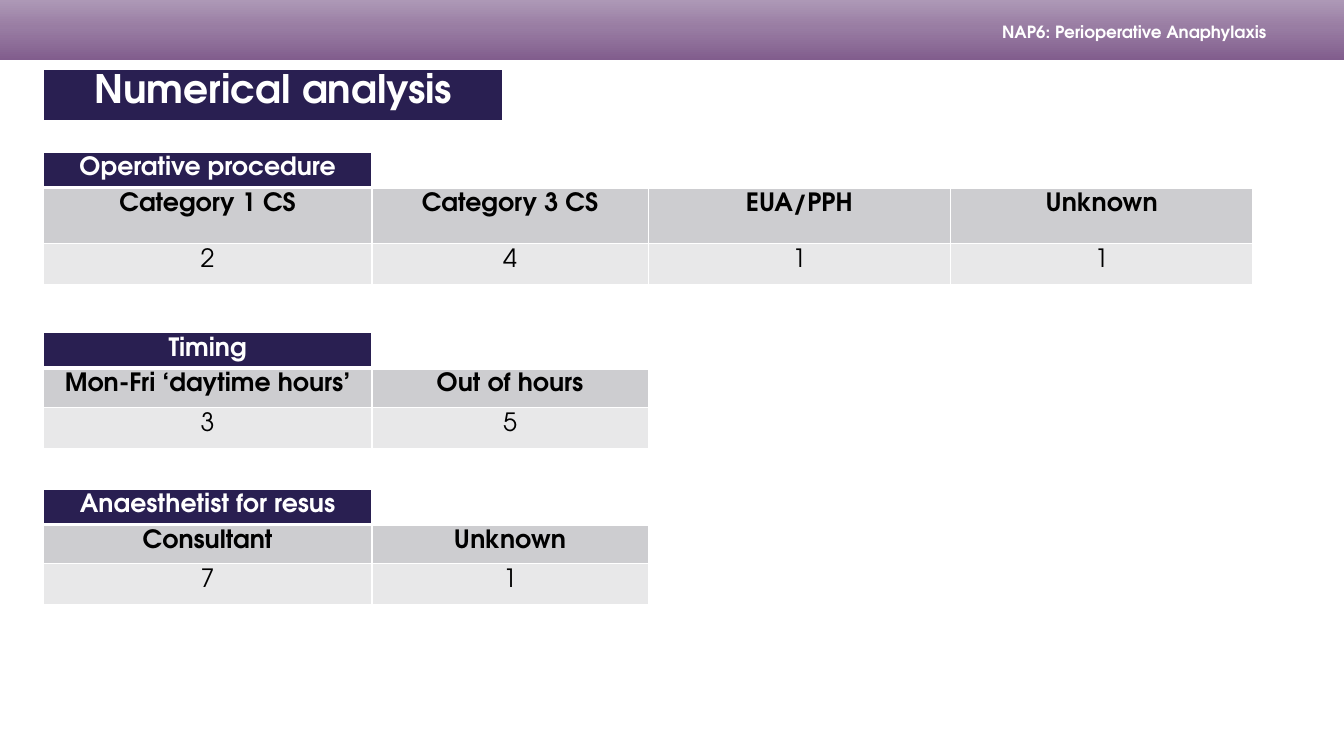
from copy import deepcopy

from lxml.etree import SubElement
from pptx import Presentation
from pptx.dml.color import RGBColor
from pptx.enum.shapes import MSO_SHAPE
from pptx.enum.text import MSO_ANCHOR, PP_ALIGN
from pptx.oxml.ns import qn
from pptx.util import Inches, Pt

NAVY, GREY, PALE, WHITE, BLACK = "291F51", "CDCDD0", "E8E8E9", "FFFFFF", "000000"


def color(code):
    return RGBColor.from_string(code)


def write(frame, text, size=18, ink=BLACK, bold=True, align=PP_ALIGN.CENTER,
          font="TeX Gyre Adventor"):
    par = frame.paragraphs[0]
    par.alignment = align
    run = par.add_run()
    run.text = text
    run.font.name, run.font.size, run.font.bold = font, Pt(size), bold
    run.font.color.rgb = color(ink)


class Deck:
    """A slide laid out on 40 columns and 25 rows."""

    def __init__(self):
        self.show = Presentation()
        self.show.slide_width, self.show.slide_height = Inches(13.33), Inches(7.5)
        self.slide = self.show.slides.add_slide(self.show.slide_layouts[6])

    def x(self, cols):
        return round(self.show.slide_width * cols / 40)

    def y(self, rows):
        return round(self.show.slide_height * rows / 25)

    def place(self, left, top, width, height):
        return self.x(left), self.y(top), self.x(width), self.y(height)

    def band(self, left, top, width, height, stops):
        shape = self.slide.shapes.add_shape(
            MSO_SHAPE.RECTANGLE, *self.place(left, top, width, height))
        shape.shadow.inherit = False
        shape.line.fill.background()
        shape.fill.gradient()
        shape.fill.gradient_angle = 90
        group = shape.element.find(".//" + qn("a:gsLst"))
        group.append(deepcopy(group[-1]))
        for stop, (share, code) in zip(shape.fill.gradient_stops, stops):
            stop.position, stop.color.rgb = share, color(code)

    def label(self, left, top, width, height, text, **style):
        frame = self.slide.shapes.add_textbox(
            *self.place(left, top, width, height)).text_frame
        frame.word_wrap = True
        frame.vertical_anchor = MSO_ANCHOR.MIDDLE
        frame.margin_top = frame.margin_bottom = 0
        frame.margin_right = self.x(0.7)
        write(frame, text, **style)

    def edge(self, cell, base):
        for side in "LRTB":
            width = base if side == "B" else 1
            line = SubElement(cell._tc.get_or_add_tcPr(), qn(f"a:ln{side}"),
                              w=str(Pt(width)))
            fill = SubElement(line, qn("a:solidFill"))
            SubElement(fill, qn("a:srgbClr"), val=WHITE)

    def table(self, left, top, widths, heights, data, size=18):
        grid = self.slide.shapes.add_table(
            len(heights), len(widths),
            *self.place(left, top, sum(widths), sum(heights))).table
        grid.first_row = grid.horz_banding = False
        for col, width in zip(grid.columns, widths):
            col.width = self.x(width)
        # Each row has its own fill, ink and weight
        looks = [(NAVY, WHITE, True), (GREY, BLACK, True), (PALE, BLACK, False)]
        for i, (height, (back, ink, bold)) in enumerate(zip(heights, looks)):
            grid.rows[i].height = self.y(height)
            for j in range(len(widths)):
                cell = grid.cell(i, j)
                cell.margin_left = cell.margin_right = cell.margin_bottom = 0
                cell.margin_top = self.y(0.17)
                self.edge(cell, 1 if i else 3)
                if j < len(data[i]):
                    cell.fill.solid()
                    cell.fill.fore_color.rgb = color(back)
                    write(cell.text_frame, data[i][j], size=size, ink=ink, bold=bold)
                else:
                    cell.fill.background()


def main():
    deck = Deck()
    left, widths = 1.29, [9.78, 8.22, 9, 9]

    # Header band
    deck.band(0, 0, 40, 2, [(0, "815D8D"), (0.55, "997DA3"), (1, "AD98B6")])
    deck.label(25.05, 0.6, 13.35, 0.93, "NAP6: Perioperative Anaphylaxis",
               size=12, ink=WHITE, align=PP_ALIGN.RIGHT)

    # Result tables: top, height of the heading row, rows of text
    tables = [
        (5.03, 1.85, [["Operative procedure"],
                      ["Category 1 CS", "Category 3 CS", "EUA/PPH", "Unknown"],
                      ["2", "4", "1", "1"]]),
        (11, 1.3, [["Timing"], ["Mon-Fri ‘daytime hours’", "Out of hours"], ["3", "5"]]),
        (16.17, 1.3, [["Anaesthetist for resus"], ["Consultant", "Unknown"], ["7", "1"]]),
    ]
    for top, head, data in tables:
        deck.table(left, top, widths, [1.12, head, 1.37], data)

    # Title
    deck.table(left, 2.3, [13.68], [1.48], [["Numerical analysis"]], size=28)

    deck.show.save("out.pptx")


if __name__ == "__main__":
    main()
